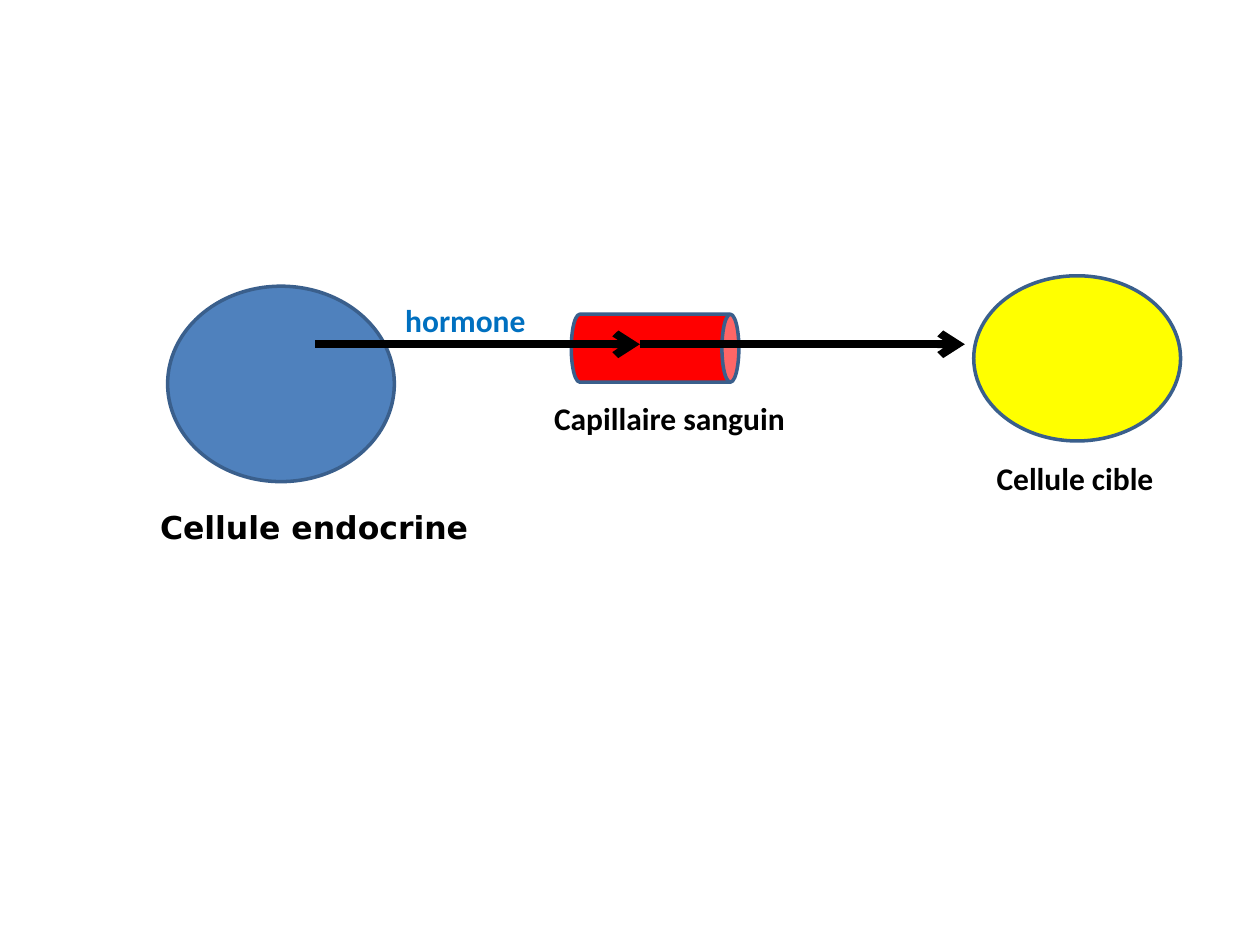
from typing import NamedTuple

from lxml.etree import SubElement
from pptx import Presentation
from pptx.dml.color import RGBColor
from pptx.enum.shapes import MSO_CONNECTOR, MSO_SHAPE
from pptx.enum.text import MSO_AUTO_SIZE, PP_ALIGN
from pptx.oxml.ns import qn
from pptx.util import Cm, Pt

OUTLINE = "3A5F8C"
BLACK = "000000"
LABEL_HEIGHT = 1.02
ARROW_START, ARROW_LENGTH, ARROW_Y = 6.35, 6.55, 6.94


class Body(NamedTuple):
    """A cell or vessel; lengths in centimetres."""
    preset: MSO_SHAPE
    left: float
    top: float
    width: float
    height: float
    fill: str
    rotation: float = 0


class Label(NamedTuple):
    text: str
    left: float
    top: float
    width: float
    color: str = BLACK
    font: str = "Calibri"
    align: PP_ALIGN = PP_ALIGN.LEFT


BODIES = [
    Body(MSO_SHAPE.OVAL, 3.38, 5.77, 4.57, 3.94, "4F81BD"),
    Body(MSO_SHAPE.CAN, 12.52, 5.33, 1.37, 3.38, "FF0000", 90),
    Body(MSO_SHAPE.OVAL, 19.63, 5.56, 4.17, 3.33, "FFFF00"),
]
LABELS = [
    Label("Cellule endocrine", 2.97, 10.11, 6.73, font="DejaVu Sans",
          align=PP_ALIGN.CENTER),
    Label("Capillaire sanguin", 10.92, 7.92, 5.21),
    Label("Cellule cible", 19.84, 9.12, 3.68),
    Label("hormone", 7.92, 5.94, 3.1, "0070C0"),
]


def rgb(value: str) -> RGBColor:
    return RGBColor.from_string(value)


def draw_body(slide, body: Body) -> None:
    shape = slide.shapes.add_shape(
        body.preset, Cm(body.left), Cm(body.top), Cm(body.width), Cm(body.height))
    shape.rotation = body.rotation
    shape.shadow.inherit = False
    shape.fill.solid()
    shape.fill.fore_color.rgb = rgb(body.fill)
    shape.line.color.rgb = rgb(OUTLINE)
    shape.line.width = Pt(2)


def draw_arrow(slide, start: float, end: float, y: float) -> None:
    arrow = slide.shapes.add_connector(
        MSO_CONNECTOR.STRAIGHT, Cm(start), Cm(y), Cm(end), Cm(y))
    arrow.line.color.rgb = rgb(BLACK)
    arrow.line.width = Pt(4.5)
    SubElement(arrow.line._get_or_add_ln(), qn("a:tailEnd"), type="arrow")
    SubElement(arrow._element.spPr, qn("a:effectLst"))


def draw_label(slide, label: Label) -> None:
    box = slide.shapes.add_textbox(
        Cm(label.left), Cm(label.top), Cm(label.width), Cm(LABEL_HEIGHT))
    frame = box.text_frame
    frame.word_wrap = False
    frame.auto_size = MSO_AUTO_SIZE.SHAPE_TO_FIT_TEXT
    paragraph = frame.paragraphs[0]
    paragraph.alignment = label.align
    run = paragraph.add_run()
    run.text = label.text
    for attribute, value in {"name": label.font, "size": Pt(18), "bold": True}.items():
        setattr(run.font, attribute, value)
    run.font.color.rgb = rgb(label.color)


def main() -> None:
    presentation = Presentation()
    presentation.slide_width, presentation.slide_height = Cm(25.4), Cm(19.05)
    slide = presentation.slides.add_slide(presentation.slide_layouts[6])

    # Cells and capillary
    for body in BODIES:
        draw_body(slide, body)

    # Path of the hormone: into the capillary, then on to the target cell
    for step in range(2):
        start = ARROW_START + step * ARROW_LENGTH
        draw_arrow(slide, start, start + ARROW_LENGTH, ARROW_Y)

    # Captions
    for label in LABELS:
        draw_label(slide, label)

    presentation.save("out.pptx")


if __name__ == "__main__":
    main()
